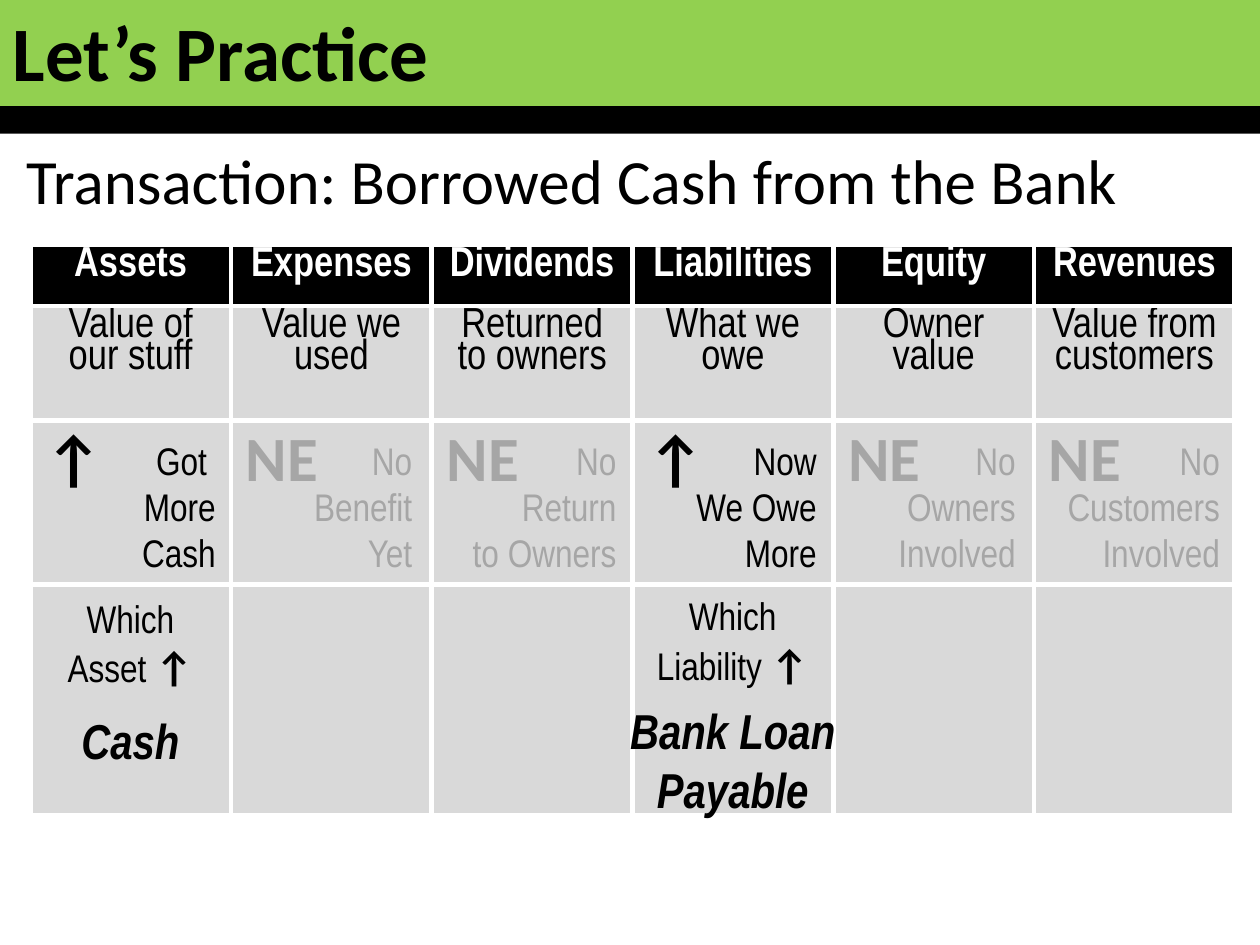
from dataclasses import dataclass
from typing import NamedTuple

from lxml.etree import SubElement
from pptx import Presentation
from pptx.dml.color import RGBColor
from pptx.enum.shapes import MSO_SHAPE as Shape
from pptx.enum.text import MSO_ANCHOR as Anchor, PP_ALIGN as Align
from pptx.oxml.ns import qn
from pptx.util import Inches, Pt

COLORS = {"black": "000000", "white": "FFFFFF", "green": "92D050",
          "cell": "D9D9D9", "muted": "A6A6A6"}
FORMATS = {
    "title": {"name": "Calibri", "size": Pt(44), "bold": True},
    "transaction": {"name": "Calibri", "size": Pt(36), "bold": False},
    "header": {"name": "Arial Narrow", "size": Pt(24), "bold": True},
    "meaning": {"name": "Arial Narrow", "size": Pt(24), "bold": False},
    "mark": {"name": "Calibri", "size": Pt(36), "bold": True},
    "reason": {"name": "Arial Narrow", "size": Pt(22)},
    "arrow": {"name": "Calibri", "size": Pt(24), "bold": True},
    "answer": {"name": "Arial Narrow", "size": Pt(28), "bold": True, "italic": True},
}
TABLE_LEFT, TABLE_TOP, TABLE_WIDTH = 0.24, 1.94, 9.56
ROW_HEIGHTS = [0.49, 0.91, 1.3, 1.83]


class Run(NamedTuple):
    text: str
    style: str
    color: str = "black"


class Box(NamedTuple):
    left: float
    top: float
    width: float
    height: float


@dataclass
class Account:
    name: str
    meaning: list[str]
    mark: str
    reason: list[str]
    reason_right: float
    reason_width: float

    @property
    def color(self) -> str:
        return "black" if self.mark == "↑" else "muted"


@dataclass
class Answer:
    question: str
    question_box: Box
    lines: list[str]
    answer_box: Box


ACCOUNTS = [
    Account("Assets", ["Value of our stuff"], "↑", ["Got ", "More", "Cash"], 1.81, 0.79),
    Account("Expenses", ["Value we used"], "NE", ["No", "Benefit", "Yet"], 3.37, 0.99),
    Account("Dividends", ["Returned to owners"], "NE", ["No", "Return", "to Owners"], 4.99, 1.35),
    Account("Liabilities", ["What we owe"], "↑", ["Now", "We Owe", "More"], 6.58, 1.17),
    Account("Equity", ["Owner", "value"], "NE", ["No", "Owners", "Involved"], 8.16, 1.14),
    Account("Revenues", ["Value from customers"], "NE",
            ["No", "Customers", "Involved"], 9.78, 1.42),
]
ANSWERS = [
    Answer("Which Asset ", Box(0.26, 4.67, 1.55, 0.88),
           ["Cash"], Box(0.26, 5.59, 1.55, 0.57)),
    Answer("Which Liability ", Box(5.04, 4.65, 1.55, 0.88),
           ["Bank Loan", "Payable"], Box(4.81, 5.51, 2.01, 1.04)),
]


def rgb(color: str) -> RGBColor:
    return RGBColor.from_string(COLORS[color])


def write(frame, paragraphs: list[list[Run]], align=Align.LEFT, spacing=None) -> None:
    for index, runs in enumerate(paragraphs):
        paragraph = frame.add_paragraph() if index else frame.paragraphs[0]
        paragraph.alignment = align
        paragraph.line_spacing = spacing
        for text, style, color in runs:
            run = paragraph.add_run()
            run.text = text
            for attribute, value in FORMATS[style].items():
                setattr(run.font, attribute, value)
            run.font.color.rgb = rgb(color)


def add_bar(slide, box: Box, color: str) -> None:
    bar = slide.shapes.add_shape(Shape.RECTANGLE, *map(Inches, box))
    bar.shadow.inherit = False
    bar.fill.solid()
    bar.fill.fore_color.rgb = rgb(color)
    bar.line.fill.background()


def add_text(slide, box: Box, paragraphs: list[list[Run]],
             align=Align.LEFT, wrap: bool = True) -> None:
    frame = slide.shapes.add_textbox(*map(Inches, box)).text_frame
    frame.word_wrap = wrap
    write(frame, paragraphs, align)


def format_cell(cell, color: str) -> None:
    properties = cell._tc.get_or_add_tcPr()
    for side in ("a:lnL", "a:lnR", "a:lnT", "a:lnB"):
        line = SubElement(properties, qn(side), w=str(Pt(3)))
        fill = SubElement(line, qn("a:solidFill"))
        SubElement(fill, qn("a:srgbClr"), val=COLORS["white"])
    cell.fill.solid()
    cell.fill.fore_color.rgb = rgb(color)


def add_account_table(slide) -> None:
    box = Box(TABLE_LEFT, TABLE_TOP, TABLE_WIDTH, sum(ROW_HEIGHTS))
    table = slide.shapes.add_table(
        len(ROW_HEIGHTS), len(ACCOUNTS), *map(Inches, box)).table
    for row, height in zip(table.rows, ROW_HEIGHTS):
        row.height = Inches(height)
    for column, account in enumerate(ACCOUNTS):
        for row in range(len(ROW_HEIGHTS)):
            format_cell(table.cell(row, column), "cell" if row else "black")
        write(table.cell(0, column).text_frame,
              [[Run(account.name, "header", "white")]], Align.CENTER, 0.8)
        write(table.cell(1, column).text_frame,
              [[Run(line, "meaning")] for line in account.meaning], Align.CENTER, 0.8)


def add_effect(slide, column: int, account: Account) -> None:
    left = TABLE_LEFT + 0.02 + column * TABLE_WIDTH / len(ACCOUNTS)
    add_text(slide, Box(left, 3.27, 0.79, 0.71),
             [[Run(account.mark, "mark", account.color)]])
    reason_left = account.reason_right - account.reason_width
    add_text(slide, Box(reason_left, 3.42, account.reason_width, 1.21),
             [[Run(line, "reason", account.color)] for line in account.reason],
             Align.RIGHT, wrap=False)


def add_answer(slide, answer: Answer) -> None:
    add_text(slide, answer.question_box,
             [[Run(answer.question, "reason"), Run("↑", "arrow")]], Align.CENTER)
    add_text(slide, answer.answer_box,
             [[Run(line, "answer")] for line in answer.lines], Align.CENTER)


def main() -> None:
    presentation = Presentation()
    presentation.slide_width, presentation.slide_height = Inches(10), Inches(7.5)
    slide = presentation.slides.add_slide(presentation.slide_layouts[5])

    # Heading bars, with the title in front of them
    add_bar(slide, Box(0, 0.04, 10, 1.02), "black")
    add_bar(slide, Box(0, 0, 10, 0.84), "green")
    title = slide.shapes.title
    slide.shapes._spTree.append(title._element)
    title.left, title.top, title.width, title.height = map(Inches, (0, -0.01, 10, 0.91))
    title.text_frame.vertical_anchor = Anchor.MIDDLE
    write(title.text_frame, [[Run("Let’s Practice", "title")]], spacing=0.9)

    # Transaction
    add_text(slide, Box(0.11, 1.07, 8.94, 0.71),
             [[Run("Transaction: Borrowed Cash from the Bank", "transaction")]], wrap=False)

    # Accounts and the effect on each
    add_account_table(slide)
    for column, account in enumerate(ACCOUNTS):
        add_effect(slide, column, account)

    # Account names that change
    for answer in ANSWERS:
        add_answer(slide, answer)

    presentation.save("out.pptx")


if __name__ == "__main__":
    main()
